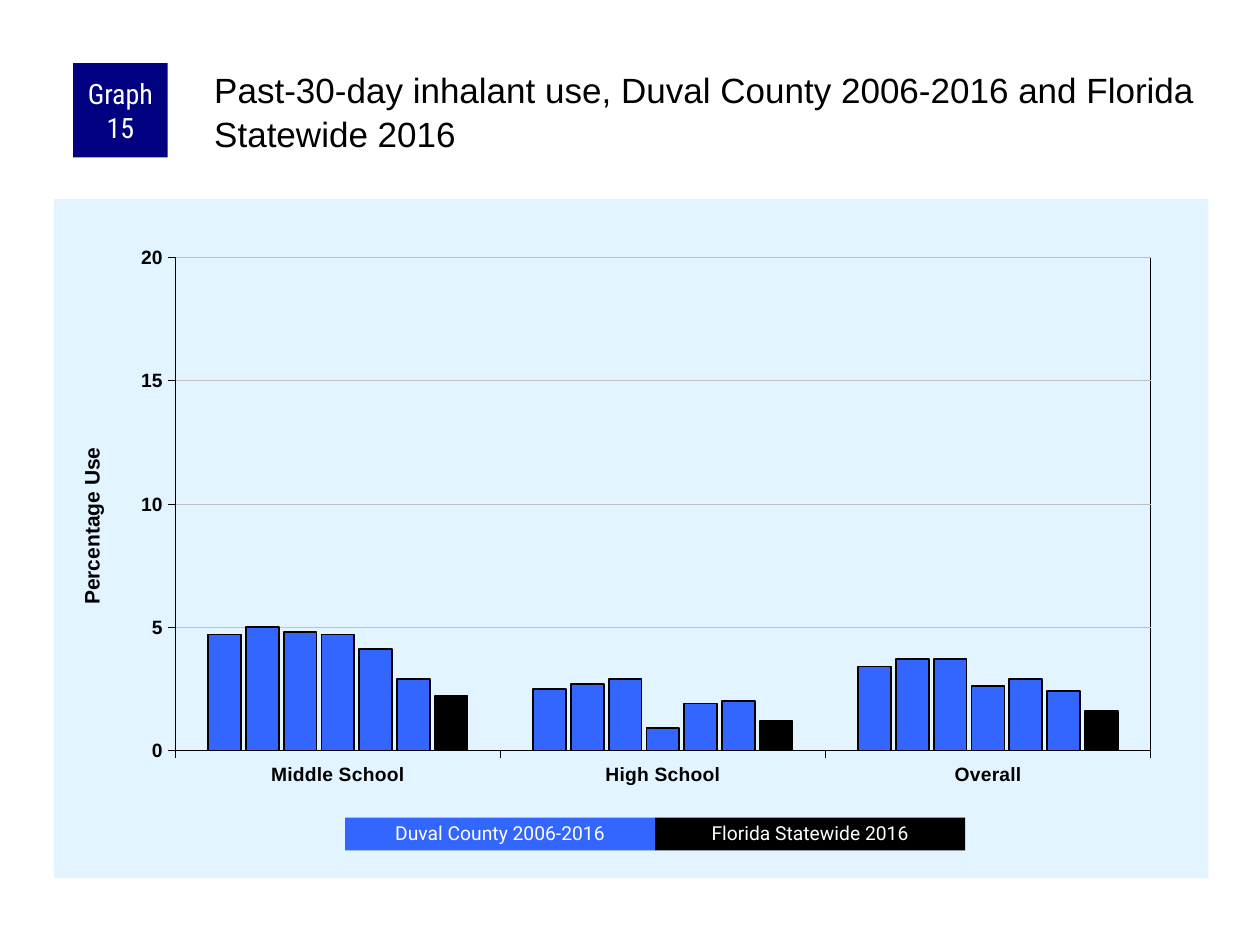
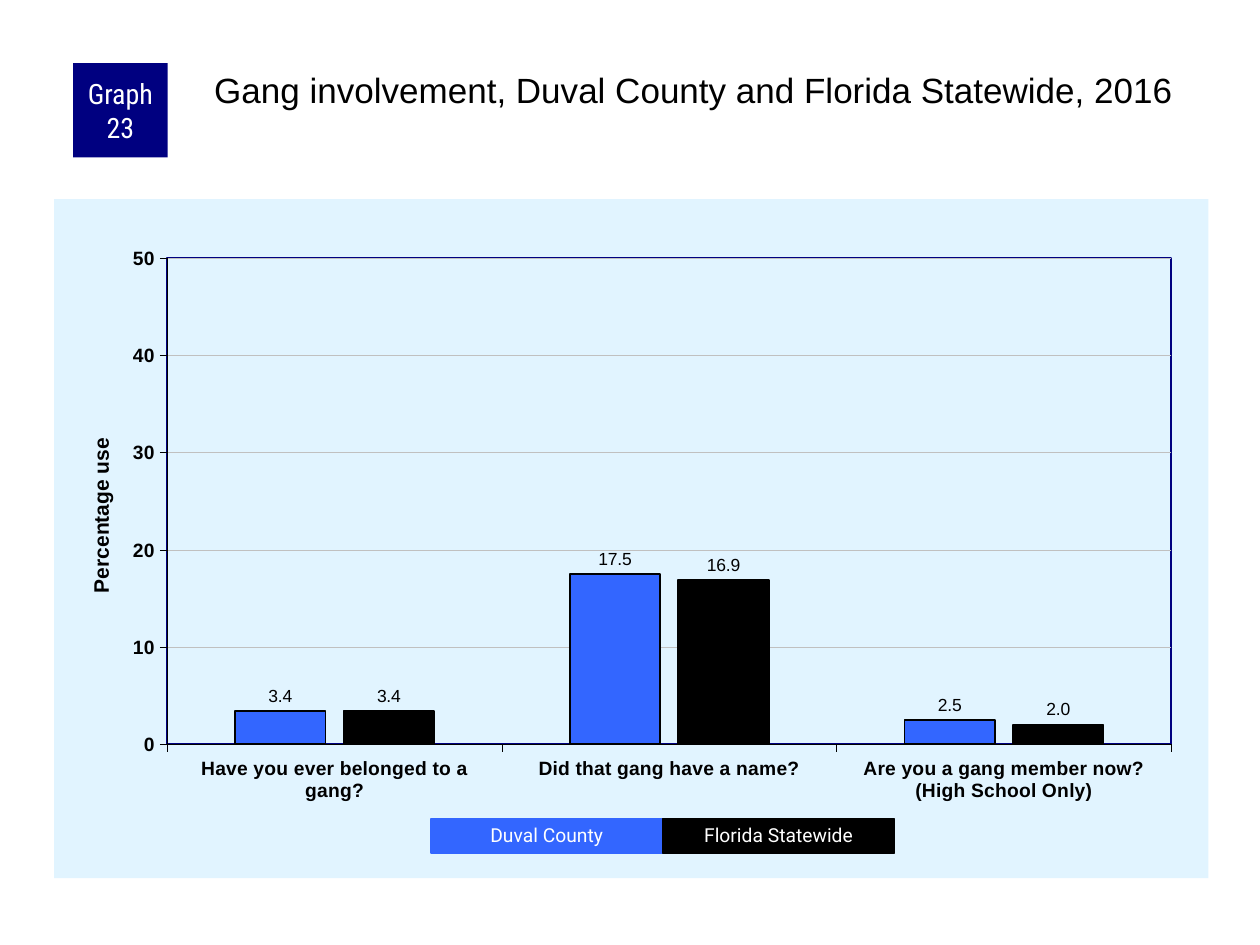
from lxml import etree
from pptx import Presentation
from pptx import util as u
from pptx.chart.data import CategoryChartData
from pptx.dml.color import RGBColor
from pptx.enum import chart as ch, shapes, text
from pptx.oxml.ns import qn

# Shared look
WHITE = RGBColor(0xFF, 0xFF, 0xFF)
BLACK = RGBColor(0, 0, 0)
NAVY = RGBColor(0, 0, 0x80)
BLUE = RGBColor(0x33, 0x66, 0xFF)
PALE = RGBColor(0xE1, 0xF4, 0xFF)
GREY = RGBColor(0xC0, 0xC0, 0xC0)
CHART_BOX = (0.43, 1.58, 9.16, 5.39)
BADGE_BOX = (0.58, 0.5, 0.75, 0.75)
TITLE_BOX = (1.67, 0.5, 7.92, 0.83)
AXIS_FONT = {"size": u.Pt(11), "bold": True, "name": "Arial"}

# Content: each row of values is one series, the last series is the state
GRAPHS = [
    {
        "badge": "Graph 15",
        "title": "Past-30-day inhalant use, Duval County 2006-2016 and Florida Statewide 2016",
        "axis": "Percentage Use", "axis_at": (0.018, 0.36),
        "max": 20, "major": 5,
        "cats": ["Middle School", "High School", "Overall"],
        "rows": [(4.7, 2.5, 3.4), (5, 2.7, 3.7), (4.8, 2.9, 3.7), (4.7, 0.9, 2.6),
                 (4.1, 1.9, 2.9), (2.9, 2, 2.4), (2.2, 1.2, 1.6)],
        "gap": 200, "overlap": -15, "labels": False,
        "plot": (0.105, 0.086, 0.845, 0.726), "frame": (BLACK, 0.25),
        "legend": ["Duval County 2006-2016", "Florida Statewide 2016"],
        "legend_box": (2.74, 6.49, 2.46, 0.26), "legend_line": False,
    },
    {
        "badge": "Graph 23",
        "title": "Gang involvement, Duval County and Florida Statewide, 2016",
        "axis": "Percentage use", "axis_at": (0.026, 0.346),
        "max": 50, "major": 10,
        "cats": ["Have you ever belonged to a gang?", "Did that gang have a name?",
                 "Are you a gang member now?\n(High School Only)"],
        "rows": [(3.4, 17.5, 2.5), (3.4, 16.9, 2)],
        "gap": 150, "overlap": -20, "labels": True,
        "plot": (0.098, 0.087, 0.87, 0.716), "frame": (NAVY, 1),
        "legend": ["Duval County", "Florida Statewide"],
        "legend_box": (3.42, 6.5, 1.84, 0.27), "legend_line": True,
    },
]


def inches(box):
    return [u.Inches(v) for v in box]


def set_all(obj, values):
    for name, value in values.items():
        setattr(obj, name, value)


def set_font(font, color=BLACK, **values):
    set_all(font, values)
    font.color.rgb = color


def set_line(line, color, width):
    line.color.rgb = color
    line.width = u.Pt(width)


def write(sp, words, margins, anchor, align, spacing, color, **font):
    tf = sp.text_frame
    tf.text = words
    left, top, right, bottom = inches(margins)
    set_all(tf, {"word_wrap": True, "auto_size": text.MSO_AUTO_SIZE.NONE,
                 "vertical_anchor": anchor, "margin_left": left, "margin_top": top,
                 "margin_right": right, "margin_bottom": bottom})
    p = tf.paragraphs[0]
    set_all(p, {"alignment": align, "line_spacing": spacing})
    set_font(p.runs[0].font, color, **font)


def add_box(s, box, fill, words, margins, spacing, **font):
    sp = s.shapes.add_shape(shapes.MSO_SHAPE.RECTANGLE, *inches(box))
    sp.shadow.inherit = False
    sp.fill.solid()
    sp.fill.fore_color.rgb = fill
    sp.line.fill.background()
    write(sp, words, margins, text.MSO_ANCHOR.MIDDLE, text.PP_ALIGN.CENTER,
          spacing, WHITE, **font)
    return sp


# Chart parts that need XML
def set_layout(parent, index, position, inner=False):
    for old in parent.findall(qn("c:layout")):
        parent.remove(old)
    layout = etree.Element(qn("c:layout"))
    manual = etree.SubElement(layout, qn("c:manualLayout"))
    settings = [("layoutTarget", "inner")] if inner else []
    settings += [("xMode", "edge"), ("yMode", "edge")]
    settings += zip("xywh", position)
    for tag, value in settings:
        etree.SubElement(manual, qn("c:" + tag)).set("val", str(value))
    parent.insert(index, layout)


def solid(parent, color):
    fill = etree.SubElement(parent, qn("a:solidFill"))
    etree.SubElement(fill, qn("a:srgbClr")).set("val", str(color))


def set_backgrounds(chart, frame):
    root = chart._chartSpace.find(qn("c:chart"))
    area = etree.Element(qn("c:spPr"))
    solid(area, PALE)
    etree.SubElement(etree.SubElement(area, qn("a:ln")), qn("a:noFill"))
    root.addnext(area)
    color, width = frame
    plot = etree.SubElement(root.find(qn("c:plotArea")), qn("c:spPr"))
    etree.SubElement(plot, qn("a:noFill"))
    ln = etree.SubElement(plot, qn("a:ln"))
    ln.set("w", str(int(u.Pt(width))))
    solid(ln, color)


def add_graph(s, g):
    data = CategoryChartData()
    data.categories = g["cats"]
    for i, row in enumerate(g["rows"], 1):
        data.add_series(f"Series {i}", row)
    chart = s.shapes.add_chart(ch.XL_CHART_TYPE.COLUMN_CLUSTERED,
                               *inches(CHART_BOX), data).chart
    set_all(chart, {"has_legend": False, "has_title": False})
    set_font(chart.font, size=u.Pt(11), name="Arial")

    # Axes
    cat, val = chart.category_axis, chart.value_axis
    for axis in (cat, val):
        axis.major_tick_mark = ch.XL_TICK_MARK.OUTSIDE
        axis.minor_tick_mark = ch.XL_TICK_MARK.NONE
        set_font(axis.tick_labels.font, **AXIS_FONT)
        set_line(axis.format.line, BLACK, 0.25)
    set_all(val, {"minimum_scale": 0, "maximum_scale": g["max"],
                  "major_unit": g["major"], "has_major_gridlines": True})
    set_line(val.major_gridlines.format.line, GREY, 0.25)
    title = val.axis_title
    title.text_frame.text = g["axis"]
    set_font(title.text_frame.paragraphs[0].runs[0].font,
             size=u.Pt(12), bold=True, name="Arial")
    set_layout(title._element, 1, g["axis_at"])

    # Columns
    plot = chart.plots[0]
    set_all(plot, {"gap_width": g["gap"], "overlap": g["overlap"],
                   "vary_by_categories": False})
    for i, series in enumerate(plot.series, 1):
        series.invert_if_negative = False
        series.format.fill.solid()
        series.format.fill.fore_color.rgb = BLACK if i == len(g["rows"]) else BLUE
        set_line(series.format.line, BLACK, 1)
    if g["labels"]:
        plot.has_data_labels = True
        labels = plot.data_labels
        set_all(labels, {"show_value": True, "number_format": "0.0",
                         "number_format_is_linked": False,
                         "position": ch.XL_LABEL_POSITION.OUTSIDE_END})
        set_font(labels.font, size=u.Pt(10), name="Arial")

    set_layout(chart._chartSpace.find(qn("c:chart")).find(qn("c:plotArea")),
               0, g["plot"], inner=True)
    set_backgrounds(chart, g["frame"])


def add_legend(s, g):
    left, top, width, height = g["legend_box"]
    for i, (words, color) in enumerate(zip(g["legend"], (BLUE, BLACK))):
        sp = add_box(s, (left + i * width, top, width, height), color, words,
                     (0.1, 0.05, 0.1, 0.05), 0.9, size=u.Pt(11), name="Roboto")
        if g["legend_line"]:
            set_line(sp.line, color, 0.75)


def add_title(s, words):
    sp = s.shapes.title
    sp.left, sp.top, sp.width, sp.height = inches(TITLE_BOX)
    write(sp, words, (0.03, 0.03, 0, 0), text.MSO_ANCHOR.TOP, text.PP_ALIGN.LEFT,
          1.05, BLACK, size=u.Pt(20), name="Arial")


def main():
    prs = Presentation()
    prs.slide_width, prs.slide_height = u.Inches(10), u.Inches(7.5)
    for g in GRAPHS:
        s = prs.slides.add_slide(prs.slide_layouts[5])
        add_title(s, g["title"])
        add_graph(s, g)
        add_box(s, BADGE_BOX, NAVY, g["badge"], (0.05, 0, 0.05, 0), 1.0,
                size=u.Pt(16), name="Roboto Condensed")
        add_legend(s, g)
    prs.save("out.pptx")


if __name__ == "__main__":
    main()
